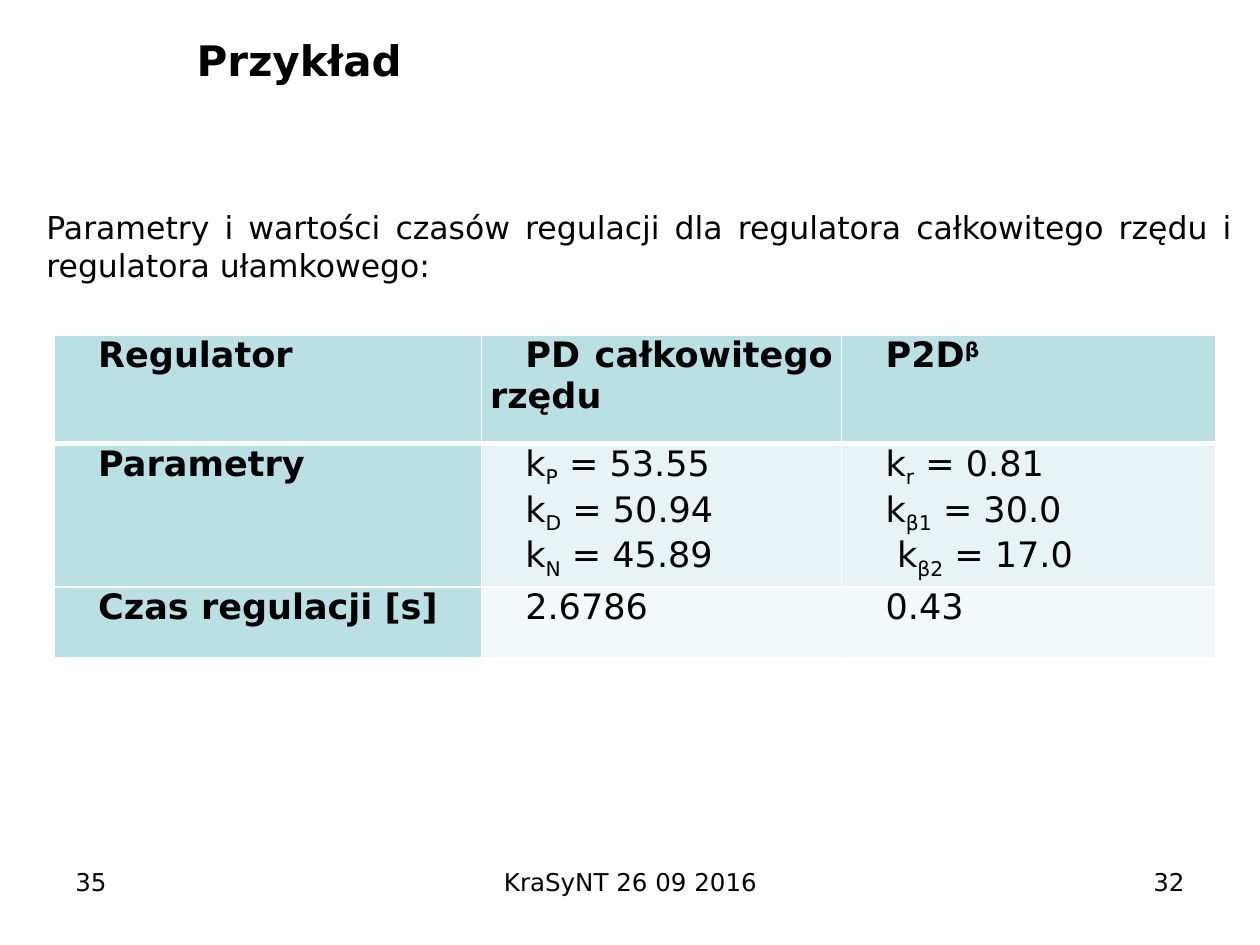
from dataclasses import dataclass
from lxml.etree import SubElement
from pptx import Presentation
from pptx.dml.color import RGBColor
from pptx.enum.text import MSO_ANCHOR, MSO_AUTO_SIZE, PP_ALIGN
from pptx.oxml.ns import qn
from pptx.util import Inches, Pt


@dataclass(frozen=True)
class Theme:
    font: str = "DejaVu Sans"
    text: str = "000000"
    line: str = "FFFFFF"
    header: str = "BBE0E3"
    rows: tuple = ("BBE0E3", "E7F3F4", "F3F9FA")
    title_size: int = 24
    body_size: int = 18
    table_size: int = 20
    footer_size: int = 14


theme = Theme()


def add_run(p, text, size, bold=False, baseline=0):
    r = p.add_run()
    r.text = text
    r.font.name = theme.font
    r.font.size = Pt(size)
    r.font.bold = bold
    r.font.color.rgb = RGBColor.from_string(theme.text)
    if baseline:
        r._r.get_or_add_rPr().set("baseline", str(baseline * 1000))


def add_border(cell, side, width):
    ln = SubElement(cell._tc.get_or_add_tcPr(), qn(f"a:{side}"), w=str(Pt(width)))
    fill = SubElement(ln, qn("a:solidFill"))
    SubElement(fill, qn("a:srgbClr"), val=theme.line)


prs = Presentation()
prs.slide_width = Inches(10)
prs.slide_height = Inches(7.5)
s = prs.slides.add_slide(prs.slide_layouts[5])

title = s.shapes.title
title.left, title.top = Inches(1.46), Inches(0.22)
title.width, title.height = Inches(7.01), Inches(1.17)
tf = title.text_frame
tf.auto_size = MSO_AUTO_SIZE.NONE
tf.vertical_anchor = MSO_ANCHOR.TOP
p = tf.paragraphs[0]
p.alignment = PP_ALIGN.LEFT
add_run(p, "Przykład", theme.title_size, bold=True)

intro = ("Parametry i wartości czasów regulacji dla regulatora "
         "całkowitego rzędu i regulatora ułamkowego:")
texts = [
    (0.27, 1.6, 9.61, 0.71, intro, PP_ALIGN.JUSTIFY, theme.body_size),
    (0.5, 6.83, 2.33, 0.52, "35", PP_ALIGN.LEFT, theme.footer_size),
    (3.42, 6.83, 3.17, 0.52, "KraSyNT 26 09 2016", PP_ALIGN.CENTER, theme.footer_size),
    (7.17, 6.83, 2.33, 0.52, "32", PP_ALIGN.RIGHT, theme.footer_size),
]
for x, y, w, h, text, align, size in texts:
    sp = s.shapes.add_textbox(Inches(x), Inches(y), Inches(w), Inches(h))
    tf = sp.text_frame
    tf.word_wrap = True
    p = tf.paragraphs[0]
    p.alignment = align
    add_run(p, text, size)

SUB, SUP = -25, 30
INDENT, WIDE_INDENT = 0.28, 0.37
table_rows = [
    [[[("Regulator", 0)]],
     [[("PD całkowitego rzędu", 0)]],
     [[("P2D", 0), ("β", SUP)]]],
    [[[("Parametry", 0)]],
     [[("k", 0), (name, SUB), (f" = {value}", 0)]
      for name, value in (("P", "53.55"), ("D", "50.94"), ("N", "45.89"))],
     [[("k", 0), (name, SUB), (f" = {value}", 0)]
      for name, value in (("r", "0.81"), ("β1", "30.0"), ("β2", "17.0"))]],
    [[[("Czas regulacji [s]", 0)]],
     [[("2.6786", 0)]],
     [[("0.43", 0)]]],
]
col_widths = [3.39, 2.86, 2.97]
row_heights = [0.86, 1.14, 0.56]
table = s.shapes.add_table(3, 3, Inches(0.43), Inches(2.66),
                           Inches(sum(col_widths)), Inches(sum(row_heights))).table
table.horz_banding = False
table.first_col = True
for col, width in zip(table.columns, col_widths):
    col.width = Inches(width)
for row, height in zip(table.rows, row_heights):
    row.height = Inches(height)

for i, row in enumerate(table_rows):
    for j, paragraphs in enumerate(row):
        cell = table.cell(i, j)
        cell.margin_left = cell.margin_right = Inches(0.07)
        cell.margin_top = cell.margin_bottom = 0
        borders = {"lnL": 1, "lnR": 1, "lnT": 3 if i == 1 else 1, "lnB": 3 if i == 0 else 1}
        for side, width in borders.items():
            add_border(cell, side, width)
        cell.fill.solid()
        color = theme.header if j == 0 else theme.rows[i]
        cell.fill.fore_color.rgb = RGBColor.from_string(color)
        tf = cell.text_frame
        for k, runs in enumerate(paragraphs):
            p = tf.paragraphs[0] if k == 0 else tf.add_paragraph()
            p.alignment = PP_ALIGN.JUSTIFY
            indent = WIDE_INDENT if ("β2", SUB) in runs else INDENT
            pPr = p._p.get_or_add_pPr()
            pPr.set("marL", "0")
            pPr.set("indent", str(Inches(indent)))
            for text, baseline in runs:
                add_run(p, text, theme.table_size, i == 0 or j == 0, baseline)

prs.save("out.pptx")
